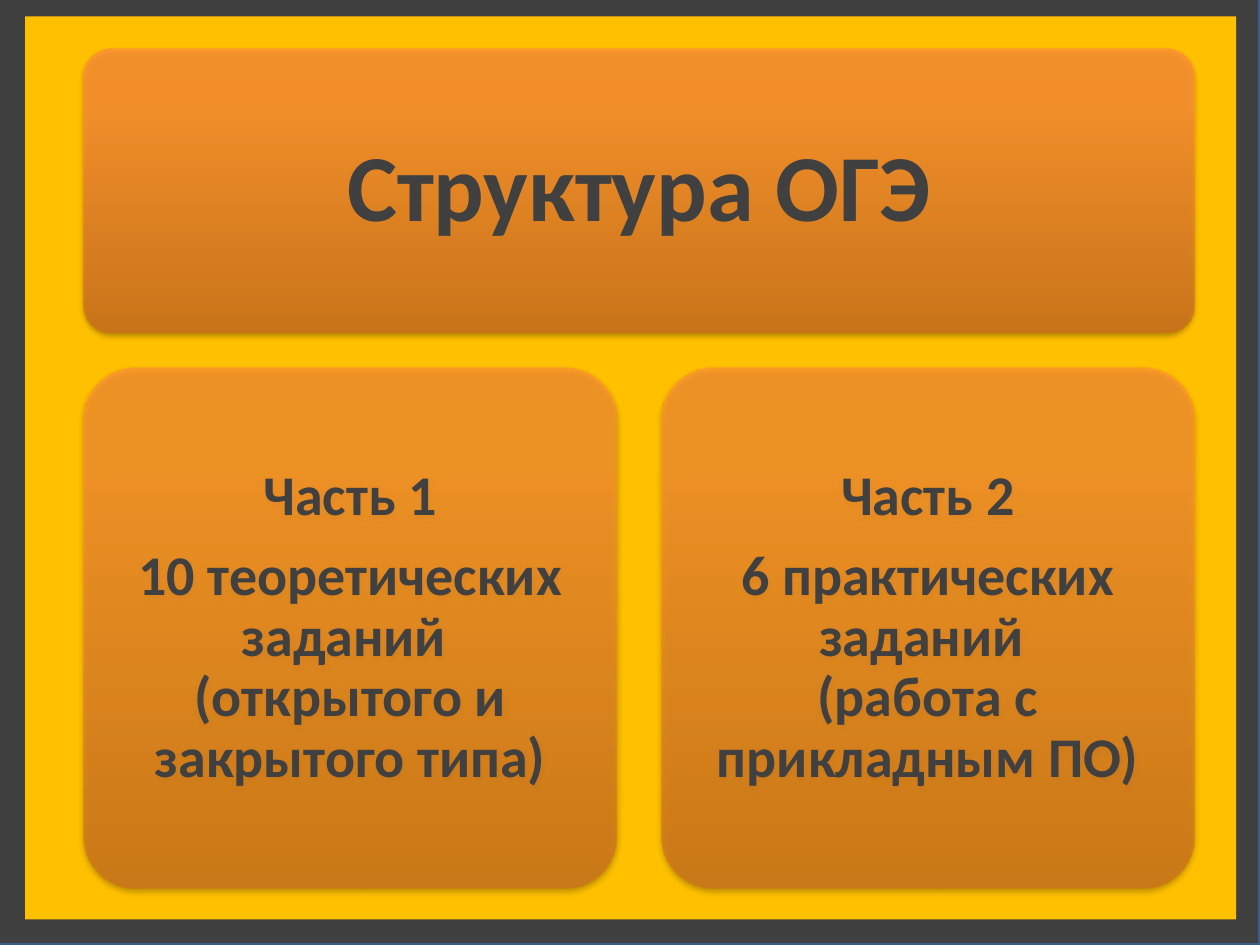
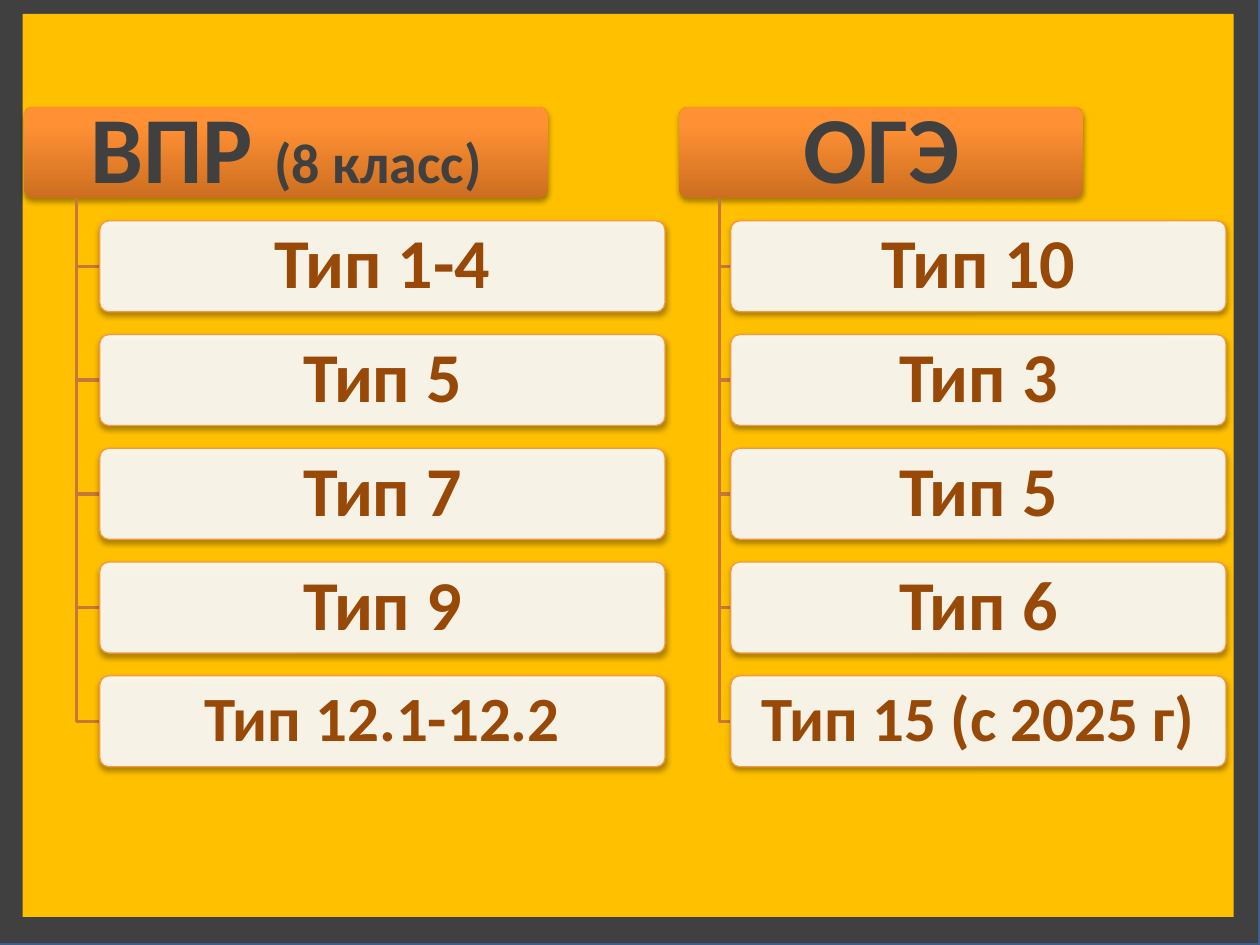
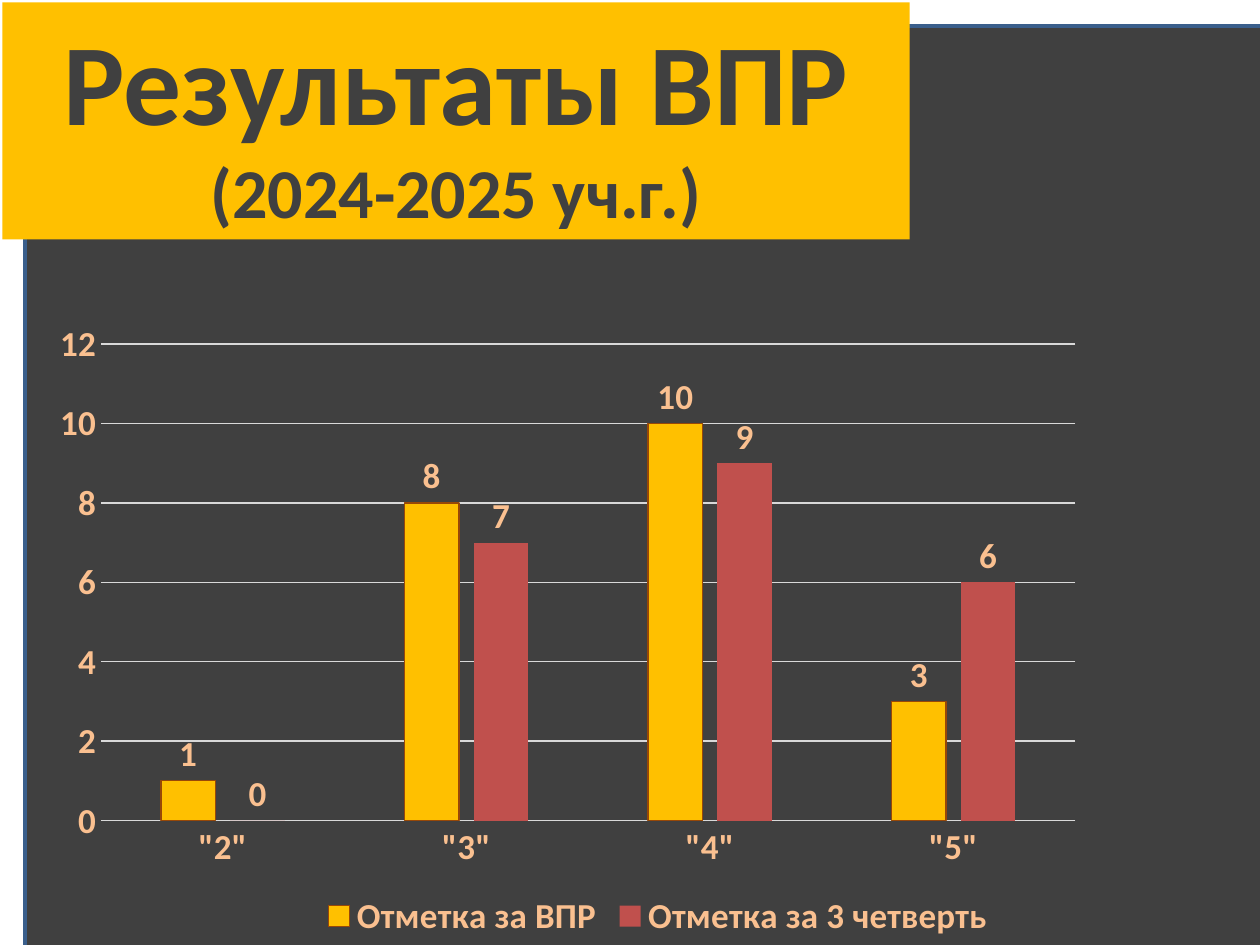
from lxml import etree
from pptx import Presentation
from pptx.chart.data import CategoryChartData
from pptx.dml.color import RGBColor
from pptx.enum.chart import XL_CHART_TYPE, XL_LABEL_POSITION, XL_LEGEND_POSITION, XL_TICK_MARK
from pptx.enum.shapes import MSO_SHAPE
from pptx.enum.text import MSO_ANCHOR, MSO_AUTO_SIZE, PP_ALIGN
from pptx.oxml.ns import qn
from pptx.util import Pt

RECT = MSO_SHAPE.RECTANGLE
ROUNDED = MSO_SHAPE.ROUNDED_RECTANGLE
CENTER = PP_ALIGN.CENTER
MIDDLE = MSO_ANCHOR.MIDDLE
NO_TICKS = XL_TICK_MARK.NONE

FONT = "Calibri"
DARK = RGBColor(0x40, 0x40, 0x40)
FRAME_BLUE = RGBColor(0x3A, 0x5F, 0x8C)
AMBER = RGBColor(0xFF, 0xC0, 0x00)
WHITE = RGBColor(0xFF, 0xFF, 0xFF)
BROWN = RGBColor(0x98, 0x48, 0x07)
ORANGE = RGBColor(0xF7, 0x96, 0x46)
TREE_LINE = RGBColor(0xC6, 0x78, 0x38)
PEACH = RGBColor(0xFA, 0xC0, 0x90)
RED = RGBColor(0xC0, 0x50, 0x4D)
GRID = RGBColor(0xD9, 0xD9, 0xD9)
BLACK = RGBColor(0x00, 0x00, 0x00)
CARD_STOPS = [
    (0, RGBColor(0xCC, 0x6E, 0x20)),
    (80, RGBColor(0xFF, 0x90, 0x34)),
    (100, RGBColor(0xFF, 0x91, 0x36)),
]

EXAM_TITLE = [("Структура ОГЭ", 54)]
EXAM_PARTS = [
    ["Часть 1", "10 теоретических заданий \v(открытого и закрытого типа)"],
    ["Часть 2", "6 практических заданий \v(работа с прикладным ПО)"],
]
TASK_TREES = [
    {
        "header": [("ВПР ", 54), ("(8 класс)", 32)],
        "header_left": 13.7, "header_width": 299.5,
        "task_left": 57, "task_width": 323,
        "tasks": [("Тип 1-4", 40), ("Тип 5", 40), ("Тип 7", 40),
                  ("Тип 9", 40), ("Тип 12.1-12.2", 36)],
    },
    {
        "header": [("ОГЭ", 54)],
        "header_left": 388, "header_width": 231,
        "task_left": 417.6, "task_width": 283,
        "tasks": [("Тип 10", 40), ("Тип 3", 40), ("Тип 5", 40),
                  ("Тип 6", 40), ("Тип 15 (с 2025 г)", 36)],
    },
]
RESULTS_TITLE = [("Результаты ВПР ", 66), ("(2024-2025 уч.г.)", 40)]
MARKS = ['"2"', '"3"', '"4"', '"5"']
RESULTS = [
    ("Отметка за ВПР", [1, 8, 10, 3], AMBER, BROWN),
    ("Отметка за 3 четверть", [0, 7, 9, 6], RED, None),
]
PLOT_AREA = {"x": 0.06, "y": 0.13, "w": 0.77, "h": 0.69}


def add_color(parent, color, alpha):
    node = etree.SubElement(parent, qn("a:srgbClr"), val=str(color))
    if alpha < 100:
        etree.SubElement(node, qn("a:alpha"), val=str(alpha * 1000))


def add_box(slide, box, kind=RECT, fill=None, line=None, line_width=0.75):
    shape = slide.shapes.add_shape(kind, *map(Pt, box))
    shape.shadow.inherit = False
    if kind == ROUNDED:
        shape.adjustments[0] = 0.1
    if fill is not None:
        shape.fill.solid()
        shape.fill.fore_color.rgb = fill
    if line is None:
        shape.line.fill.background()
    else:
        shape.line.color.rgb = line
        shape.line.width = Pt(line_width)
    return shape


def add_shadow(shape):
    effects = shape._element.spPr.find(qn("a:effectLst"))
    shadow = etree.SubElement(effects, qn("a:outerShdw"), blurRad=str(Pt(3.1)),
                              dist=str(Pt(1.8)), dir="5400000", rotWithShape="0")
    add_color(shadow, BLACK, 35)


def add_card(slide, box, alpha=100):
    """Add a rounded orange gradient card that darkens towards the bottom."""
    card = add_box(slide, box, ROUNDED)
    card.fill.gradient()
    card.fill.gradient_angle = 90
    stops = card._element.spPr.find(qn("a:gradFill")).find(qn("a:gsLst"))
    for stop in list(stops):
        stops.remove(stop)
    for position, color in CARD_STOPS:
        stop = etree.SubElement(stops, qn("a:gs"), pos=str(position * 1000))
        add_color(stop, color, alpha)
    add_shadow(card)
    return card


def style_font(font, size, color):
    font.name = FONT
    font.size = Pt(size)
    font.bold = True
    font.color.rgb = color


def write(shape, paragraphs, color=DARK, inset=(6, 4), spacing=0.9):
    """Write paragraphs, each a list of (text, size) runs."""
    frame = shape.text_frame
    frame.word_wrap = True
    frame.auto_size = MSO_AUTO_SIZE.NONE
    frame.vertical_anchor = MIDDLE
    frame.margin_left = frame.margin_right = Pt(inset[0])
    frame.margin_top = frame.margin_bottom = Pt(inset[1])
    for index, runs in enumerate(paragraphs):
        paragraph = frame.add_paragraph() if index else frame.paragraphs[0]
        paragraph.alignment = CENTER
        paragraph.line_spacing = spacing
        paragraph.space_after = Pt(0.35 * runs[0][1])
        if len(runs) == 1:
            paragraph.text = runs[0][0]
            for run in paragraph.runs:
                style_font(run.font, runs[0][1], color)
        else:
            for text, size in runs:
                run = paragraph.add_run()
                run.text = text
                style_font(run.font, size, color)


def place_title(slide, box, runs, **text_options):
    """Move the title placeholder to box, in front of what is drawn so far."""
    title = slide.shapes.title
    title.left, title.top, title.width, title.height = map(Pt, box)
    slide.shapes._spTree.append(title._element)
    write(title, [runs], **text_options)


def add_frame(slide, left=-3, top=-8):
    add_box(slide, (left, top, 723, 548), fill=DARK, line=FRAME_BLUE, line_width=2)


def add_panel(slide, left, top):
    add_box(slide, (left, top, 692, 516), fill=AMBER)


def build_structure(slide):
    add_frame(slide)
    add_panel(slide, 14.4, 9.4)
    left, width, part_width = 48, 634.5, 304.5
    title_box = (left, 28, width, 162)
    add_card(slide, title_box, alpha=80)
    place_title(slide, title_box, EXAM_TITLE, inset=(20, 20))
    for index, lines in enumerate(EXAM_PARTS):
        part_left = left + index * (width - part_width)
        card = add_card(slide, (part_left, 210, part_width, 298), alpha=70)
        write(card, [[(line, 32)] for line in lines], inset=(9.6, 9.6))


def add_branch(slide, trunk, top, end, middle):
    builder = slide.shapes.build_freeform(Pt(trunk), Pt(top))
    builder.add_line_segments([(Pt(trunk), Pt(middle)), (Pt(end), Pt(middle))], close=False)
    branch = builder.convert_to_shape()
    branch.shadow.inherit = False
    branch.fill.background()
    branch.line.color.rgb = TREE_LINE
    branch.line.width = Pt(2)


def build_task_trees(slide):
    add_frame(slide)
    add_panel(slide, 13, 8)
    top, height, gap = 61.2, 52, 13
    for tree in TASK_TREES:
        left, width = tree["header_left"], tree["header_width"]
        header = add_card(slide, (left, top, width, height))
        write(header, [tree["header"]], inset=(8, 5))
        for row, task in enumerate(tree["tasks"], start=1):
            task_top = top + row * (height + gap)
            add_branch(slide, left + width / 10, top + height,
                       tree["task_left"], task_top + height / 2)
            box = (tree["task_left"], task_top, tree["task_width"], height)
            card = add_box(slide, box, ROUNDED, WHITE, ORANGE)
            color = card._element.spPr.find(qn("a:solidFill"))[0]
            etree.SubElement(color, qn("a:alpha"), val="90000")
            add_shadow(card)
            write(card, [[task]], color=BROWN)


def set_plot_area(chart):
    plot_area = chart._chartSpace.chart.plotArea
    for layout in plot_area.findall(qn("c:layout")):
        plot_area.remove(layout)
    layout = etree.Element(qn("c:layout"))
    manual = etree.SubElement(layout, qn("c:manualLayout"))
    etree.SubElement(manual, qn("c:layoutTarget"), val="inner")
    for side in "xy":
        etree.SubElement(manual, qn(f"c:{side}Mode"), val="edge")
    for side, share in PLOT_AREA.items():
        etree.SubElement(manual, qn(f"c:{side}"), val=str(share))
    plot_area.insert(0, layout)


def add_results_chart(slide):
    data = CategoryChartData()
    data.categories = MARKS
    for name, counts, _, _ in RESULTS:
        data.add_series(name, counts)
    chart = slide.shapes.add_chart(XL_CHART_TYPE.COLUMN_CLUSTERED, Pt(14.4), Pt(145.4),
                                   Pt(723), Pt(394.6), data).chart
    style_font(chart.font, 20, PEACH)
    chart.has_title = False
    chart.has_legend = True
    chart.legend.position = XL_LEGEND_POSITION.BOTTOM
    chart.legend.include_in_layout = False
    style_font(chart.legend.font, 20, PEACH)
    set_plot_area(chart)

    for axis in (chart.category_axis, chart.value_axis):
        axis.major_tick_mark = axis.minor_tick_mark = NO_TICKS
        style_font(axis.tick_labels.font, 20, PEACH)
    counts_axis = chart.value_axis
    counts_axis.minimum_scale, counts_axis.maximum_scale, counts_axis.major_unit = 0, 12, 2
    counts_axis.format.line.fill.background()
    for line in (chart.category_axis.format.line, counts_axis.major_gridlines.format.line):
        line.color.rgb = GRID
        line.width = Pt(0.75)

    plot = chart.plots[0]
    plot.gap_width, plot.overlap, plot.vary_by_categories = 219, -27, False
    for series, (_, _, fill, outline) in zip(plot.series, RESULTS):
        series.format.fill.solid()
        series.format.fill.fore_color.rgb = fill
        if outline is None:
            series.format.line.fill.background()
        else:
            series.format.line.color.rgb = outline
            series.format.line.width = Pt(0.75)
        labels = series.data_labels
        labels.show_value = True
        labels.position = XL_LABEL_POSITION.OUTSIDE_END
        style_font(labels.font, 20, PEACH)


def build_results(slide):
    add_frame(slide, 14.4, 15)
    add_results_chart(slide)
    title_box = (1.4, 1.4, 518.4, 135.4)
    add_box(slide, title_box, fill=AMBER)
    place_title(slide, title_box, RESULTS_TITLE, inset=(7.2, 3.6), spacing=1.0)


def main():
    deck = Presentation()
    deck.slide_width, deck.slide_height = Pt(720), Pt(540)
    title_only, blank = deck.slide_layouts[5], deck.slide_layouts[6]
    build_structure(deck.slides.add_slide(title_only))
    build_task_trees(deck.slides.add_slide(blank))
    build_results(deck.slides.add_slide(title_only))
    deck.save("out.pptx")


if __name__ == "__main__":
    main()
